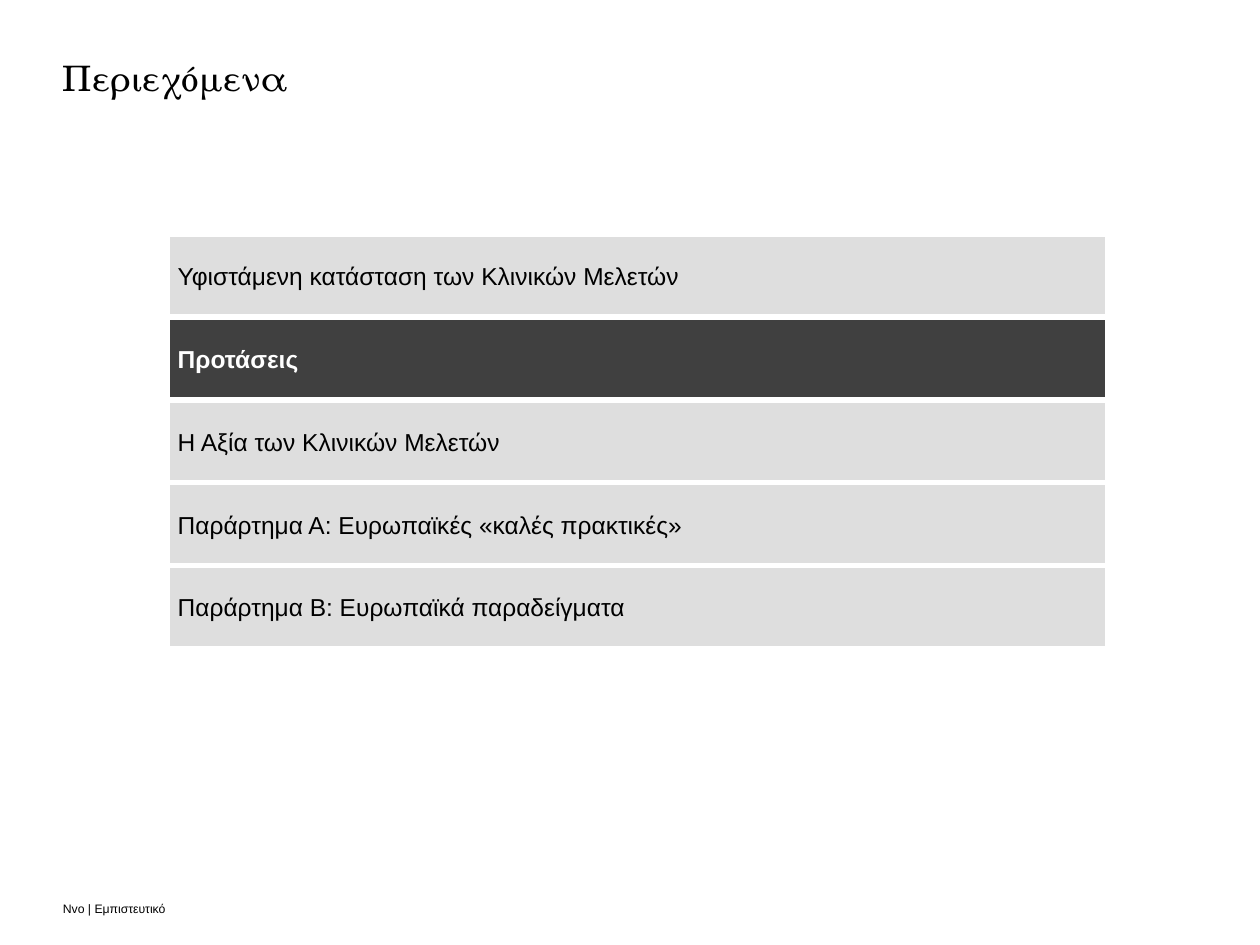
from pptx import Presentation
from pptx.dml.color import RGBColor as Color
from pptx.enum.shapes import MSO_SHAPE as Shape
from pptx.enum.text import MSO_ANCHOR as Anchor, PP_ALIGN as Align
from pptx.util import Pt

TITLE = "Περιεχόμενα"
FOOTER = "Nvo | Εμπιστευτικό"
SECTIONS = [
    "Υφιστάμενη κατάσταση των Κλινικών Μελετών",
    "Προτάσεις",
    "Η Αξία των Κλινικών Μελετών",
    "Παράρτημα Α: Ευρωπαϊκές «καλές πρακτικές»",
    "Παράρτημα Β: Ευρωπαϊκά παραδείγματα",
]
CURRENT = "Προτάσεις"

BLACK, WHITE = Color(0, 0, 0), Color(255, 255, 255)
THEME = {
    "title": {"name": "TeX Gyre Schola", "size": Pt(20), "color": BLACK},
    "footer": {"name": "Arial", "size": Pt(7), "color": BLACK},
    "section": {"name": "Arial", "size": Pt(14), "color": BLACK, "bold": False},
    "current": {"name": "Arial", "size": Pt(14), "color": WHITE, "bold": True},
    "section_fill": Color(0xDE, 0xDE, 0xDE),
    "current_fill": Color(0x40, 0x40, 0x40),
    "border": WHITE,
}
BAR_LEFT, BAR_TOP, BAR_WIDTH, BAR_HEIGHT = 95.8, 133.9, 537.1, 47.35
BAR_INSETS = (5.76, 15.1, 0, 15.1)


def write(box, text, style, anchor, insets=(0, 0, 0, 0), spacing=None):
    frame = box.text_frame
    frame.word_wrap = True
    frame.vertical_anchor = anchor
    for side, inset in zip(("left", "top", "right", "bottom"), insets):
        setattr(frame, f"margin_{side}", Pt(inset))
    para = frame.paragraphs[0]
    para.alignment = Align.LEFT
    para.line_spacing = spacing
    span = para.add_run()
    span.text = text
    for name, value in THEME[style].items():
        if name == "color":
            span.font.color.rgb = value
        else:
            setattr(span.font, name, value)


def add_bar(page, index, text):
    top = BAR_TOP + index * BAR_HEIGHT
    bar = page.shapes.add_shape(
        Shape.RECTANGLE, Pt(BAR_LEFT), Pt(top), Pt(BAR_WIDTH), Pt(BAR_HEIGHT))
    style = "current" if text == CURRENT else "section"
    bar.shadow.inherit = False
    bar.fill.solid()
    bar.fill.fore_color.rgb = THEME[f"{style}_fill"]
    bar.line.color.rgb = THEME["border"]
    bar.line.width = Pt(3)
    write(bar, text, style, Anchor.MIDDLE, BAR_INSETS)


def main():
    deck = Presentation()
    deck.slide_width, deck.slide_height = Pt(720), Pt(540)
    page = deck.slides.add_slide(deck.slide_layouts[6])
    footer = page.shapes.add_textbox(Pt(36), Pt(512.6), Pt(313), Pt(10.8))
    write(footer, FOOTER, "footer", Anchor.BOTTOM)
    title = page.shapes.add_textbox(Pt(36), Pt(36), Pt(648), Pt(36.7))
    write(title, TITLE, "title", Anchor.TOP, spacing=0.85)
    for index, text in enumerate(SECTIONS):
        add_bar(page, index, text)
    deck.save("out.pptx")


if __name__ == "__main__":
    main()
